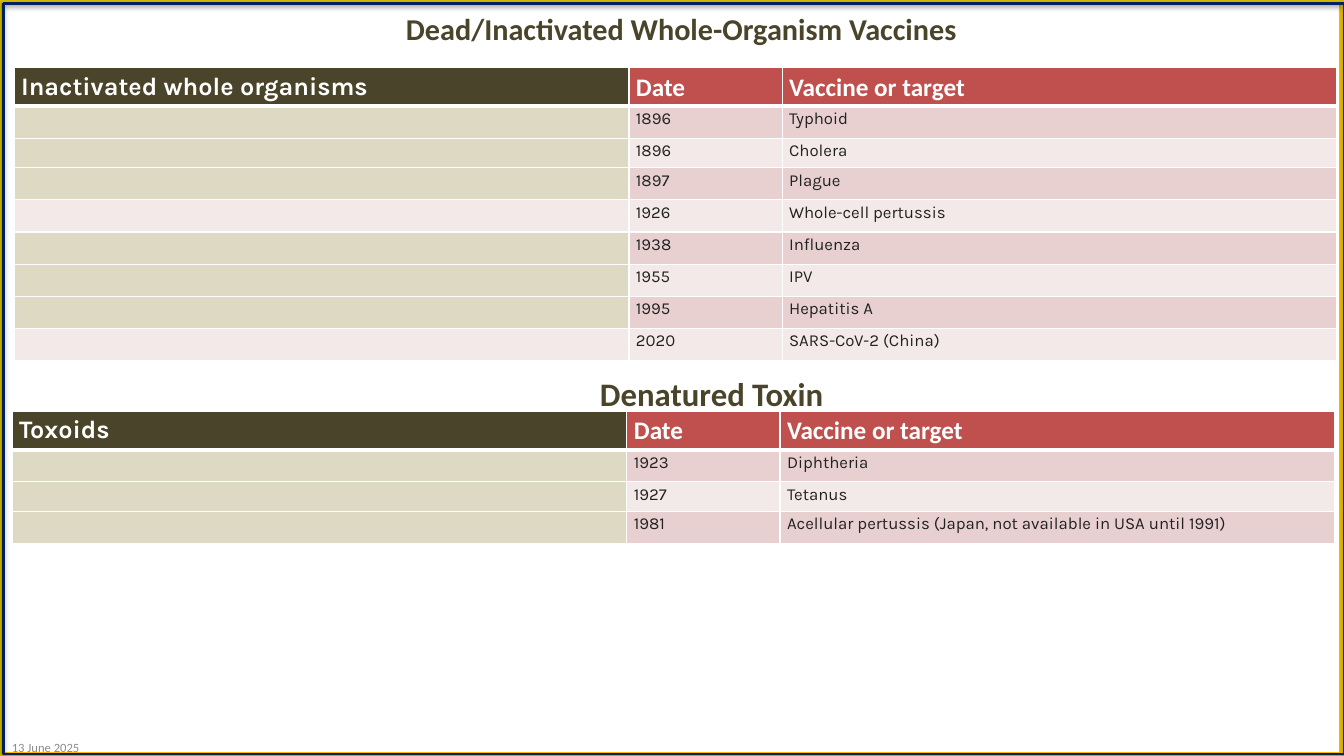
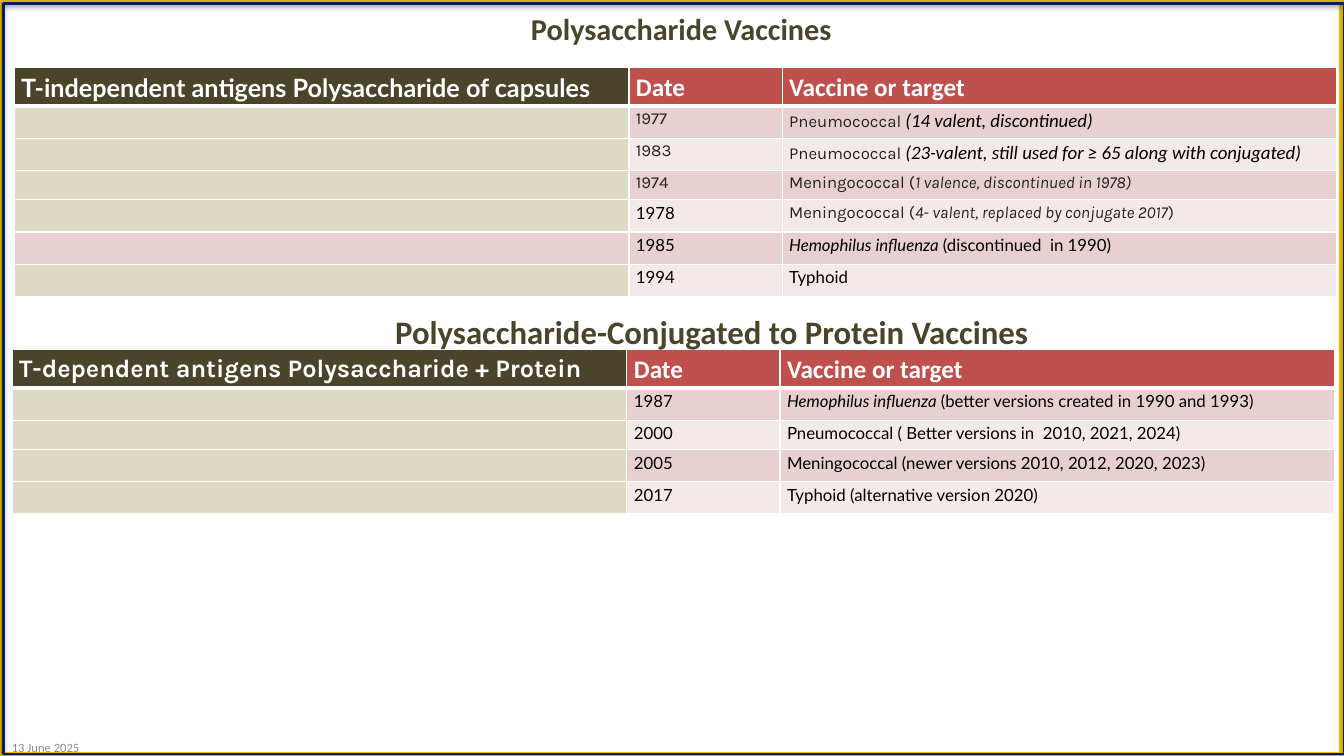
from dataclasses import dataclass, field

from lxml import etree
from pptx import Presentation
from pptx.dml.color import RGBColor
from pptx.enum import shapes, text
from pptx.oxml import ns
from pptx.util import Pt

WHITE = RGBColor(0xFF, 0xFF, 0xFF)
BLACK = RGBColor(0x00, 0x00, 0x00)
INK = RGBColor(0x22, 0x22, 0x22)
GREY = RGBColor(0x8C, 0x8C, 0x8C)
OLIVE = RGBColor(0x4A, 0x45, 0x2A)
SAND = RGBColor(0xDD, 0xD9, 0xC3)
RED = RGBColor(0xC0, 0x50, 0x4D)
BANDS = (RGBColor(0xE8, 0xD0, 0xD0), RGBColor(0xF4, 0xE9, 0xE9))
AMBER = RGBColor(0xFF, 0xC0, 0x00)
GOLD = RGBColor(0xD7, 0xBB, 0x00)
NAVY = RGBColor(0x00, 0x20, 0x60)

SLIDE_WIDTH, SLIDE_HEIGHT = 960, 540
# left, top, width, height, colour, line width, shadow
FRAMES = (
    (0, 0, 960, 538.6, AMBER, 0.75, False),
    (0, 0, 958.3, 538.6, AMBER, 3, False),
    (-0.7, 0, 960.5, 540, GOLD, 3, True),
    (2.2, 2.2, 958.3, 536.4, NAVY, 2, True),
)
HEADING_WIDTH, HEADING_HEIGHT = 944.6, 34.6
HEADING_OVERHANG = 30.2
COLUMN_WIDTHS = (439.2, 109.4, 396)
HEADER_HEIGHT, ROW_HEIGHT, SHORT_ROW_HEIGHT = 27.4, 23, 21

HEADING = dict(font="Calibri", color=OLIVE, bold=True)
COLUMN_HEAD = dict(size=18, font="Calibri", color=WHITE, bold=True)
KARLA = dict(font="Karla", color=INK)
LATO = dict(font="Lato", color=BLACK)
REMARK = dict(size=13.5, font="Calibri", color=BLACK, italic=True)
ITALIC = dict(italic=True)


@dataclass
class Row:
    """One vaccine; target is a list of (text, format overrides)."""
    date: str
    target: list
    style: dict = field(default_factory=lambda: KARLA)
    tinted: bool = True


def vaccine(date, target, **options):
    runs = [(target, {})] if isinstance(target, str) else target
    return Row(date, runs, **options)


def add_text(paragraph, content, size=12, font="Calibri", color=BLACK,
             bold=False, italic=False):
    run = paragraph.add_run()
    run.text = content
    run.font.size = Pt(size)
    run.font.name = font
    run.font.color.rgb = color
    run.font.bold = bold
    run.font.italic = italic


def place(shape, left, top, width, height):
    shape.left, shape.top = Pt(left), Pt(top)
    shape.width, shape.height = Pt(width), Pt(height)


def fill_box(shape, content, align, **style):
    frame = shape.text_frame
    frame.word_wrap = True
    frame.auto_size = text.MSO_AUTO_SIZE.NONE
    frame.vertical_anchor = text.MSO_ANCHOR.MIDDLE
    frame.paragraphs[0].alignment = align
    add_text(frame.paragraphs[0], content, **style)


def add_label(slide, bounds, content, align, **style):
    label = slide.shapes.add_textbox(*map(Pt, bounds))
    fill_box(label, content, align, **style)


def add_shadow(shape):
    effects = shape._element.spPr.find(ns.qn("a:effectLst"))
    shadow = etree.SubElement(
        effects, ns.qn("a:outerShdw"), blurRad=str(Pt(3.5)),
        dist=str(Pt(2.2)), dir="5400000", rotWithShape="0")
    color = etree.SubElement(shadow, ns.qn("a:srgbClr"), val=str(BLACK))
    etree.SubElement(color, ns.qn("a:alpha"), val="32000")


def add_frames(slide):
    """Draw the border frames and move them to the layout of the slide."""
    layout_tree = slide.slide_layout.shapes._spTree
    for left, top, width, height, color, weight, shadowed in FRAMES:
        border = slide.shapes.add_shape(
            shapes.MSO_SHAPE.RECTANGLE, Pt(left), Pt(top), Pt(width), Pt(height))
        border.fill.background()
        border.line.color.rgb = color
        border.line.width = Pt(weight)
        border.shadow.inherit = False
        if shadowed:
            add_shadow(border)
        layout_tree.append(border._element)


def format_cell(cell, fill, top=1, bottom=1):
    """Set insets, white borders and fill; top and bottom are line widths."""
    cell.margin_left = cell.margin_right = Pt(5)
    cell.margin_top = cell.margin_bottom = 0
    properties = cell._tc.get_or_add_tcPr()
    for side, weight in (("L", 1), ("R", 1), ("T", top), ("B", bottom)):
        line = etree.SubElement(properties, ns.qn("a:ln" + side), w=str(Pt(weight)))
        solid = etree.SubElement(line, ns.qn("a:solidFill"))
        etree.SubElement(solid, ns.qn("a:srgbClr"), val=str(WHITE))
    cell.fill.solid()
    cell.fill.fore_color.rgb = fill


def fill_cell(cell, runs, style):
    paragraph = cell.text_frame.paragraphs[0]
    paragraph.line_spacing = 1.15
    paragraph.space_after = Pt(8)
    for content, overrides in runs:
        add_text(paragraph, content, **{**style, **overrides})
    if not runs:
        paragraph._p.get_or_add_endParaRPr().set("sz", "1200")


def add_vaccine_table(slide, left, top, category, rows, short_row, category_font="Karla"):
    """Add a table whose body row number short_row is slightly lower."""
    heights = [HEADER_HEIGHT] + [ROW_HEIGHT] * len(rows)
    heights[short_row] = SHORT_ROW_HEIGHT
    table = slide.shapes.add_table(
        len(heights), len(COLUMN_WIDTHS), Pt(left), Pt(top),
        Pt(sum(COLUMN_WIDTHS)), Pt(sum(heights))).table
    for column, width in zip(table.columns, COLUMN_WIDTHS):
        column.width = Pt(width)
    for table_row, height in zip(table.rows, heights):
        table_row.height = Pt(height)

    heads = ((category, OLIVE, category_font), ("Date", RED, "Calibri"),
             ("Vaccine or target", RED, "Calibri"))
    for cell, (head, fill, font) in zip(table.rows[0].cells, heads):
        format_cell(cell, fill, bottom=3)
        fill_cell(cell, [(head, dict(font=font))], COLUMN_HEAD)

    for index, row in enumerate(rows):
        band = BANDS[index % 2]
        fills = (SAND if row.tinted else band, band, band)
        contents = ([], [(row.date, {})], row.target)
        for cell, fill, runs in zip(table.rows[index + 1].cells, fills, contents):
            format_cell(cell, fill, top=1 if index else 3)
            fill_cell(cell, runs, row.style)


def add_vaccine_slide(deck, title, first, subtitle, second_top, second):
    slide = deck.slides.add_slide(deck.slide_layouts[5])
    center = text.PP_ALIGN.CENTER
    place(slide.shapes.title, 14.4, 2.9, HEADING_WIDTH, HEADING_HEIGHT)
    fill_box(slide.shapes.title, title, center, size=21.6, **HEADING)
    add_label(slide, (1.4, 524.2, 100, 19.4), "13 June 2025",
              text.PP_ALIGN.LEFT, size=9, color=GREY)
    add_vaccine_table(slide, 10.1, 48.4, **first)
    add_vaccine_table(slide, 8.6, second_top, **second)
    add_label(slide, (36, second_top - HEADING_OVERHANG, HEADING_WIDTH, HEADING_HEIGHT),
              subtitle, center, size=23.4, **HEADING)
    return slide


WHOLE_ORGANISMS = dict(category="Inactivated whole organisms", short_row=2, rows=[
    vaccine("1896", "Typhoid"),
    vaccine("1896", "Cholera"),
    vaccine("1897", "Plague"),
    vaccine("1926", "Whole-cell pertussis", tinted=False),
    vaccine("1938", "Influenza"),
    vaccine("1955", "IPV"),
    vaccine("1995", "Hepatitis A"),
    vaccine("2020", "SARS-CoV-2 (China)", tinted=False),
])
TOXOIDS = dict(category="Toxoids", short_row=2, rows=[
    vaccine("1923", "Diphtheria"),
    vaccine("1927", "Tetanus"),
    vaccine("1981", "Acellular pertussis (Japan, not available in USA until 1991)"),
])
POLYSACCHARIDES = dict(
    category="T-independent antigens Polysaccharide of capsules",
    category_font="Lato", short_row=3, rows=[
        vaccine("1977", [("Pneumococcal ", {}), ("(14 valent, discontinued)", REMARK)]),
        vaccine("1983", [
            ("Pneumococcal ", {}),
            ("(23-valent, still used for ≥ 65 along with conjugated)", REMARK)]),
        vaccine("1974", [
            ("Meningococcal (", {}), ("1 valence, discontinued in 1978)", ITALIC)]),
        vaccine("1978", [
            ("Meningococcal (", KARLA),
            ("4- valent, replaced by conjugate 2017", {**KARLA, **ITALIC}),
            (")", KARLA)], style=LATO),
        vaccine("1985", [
            ("Hemophilus influenza ", ITALIC), ("(discontinued  in 1990)", {})],
            style=LATO, tinted=False),
        vaccine("1994", "Typhoid", style=LATO),
    ])
CONJUGATES = dict(
    category="T-dependent antigens Polysaccharide + Protein", short_row=2, rows=[
        vaccine("1987", [
            ("Hemophilus influenza ", ITALIC),
            ("(better versions created in 1990 and 1993)", {})], style=LATO),
        vaccine("2000", "Pneumococcal ( Better versions in  2010, 2021, 2024)", style=LATO),
        vaccine("2005", "Meningococcal (newer versions 2010, 2012, 2020, 2023)", style=LATO),
        vaccine("2017", "Typhoid (alternative version 2020)", style=LATO),
    ])


def main():
    deck = Presentation()
    deck.slide_width, deck.slide_height = Pt(SLIDE_WIDTH), Pt(SLIDE_HEIGHT)
    opening = add_vaccine_slide(
        deck, "Dead/Inactivated Whole-Organism Vaccines", WHOLE_ORGANISMS,
        "Denatured Toxin", 293.8, TOXOIDS)
    add_frames(opening)
    add_vaccine_slide(
        deck, "Polysaccharide Vaccines", POLYSACCHARIDES,
        "Polysaccharide-Conjugated to Protein Vaccines", 249.8, CONJUGATES)
    deck.save("out.pptx")


if __name__ == "__main__":
    main()
